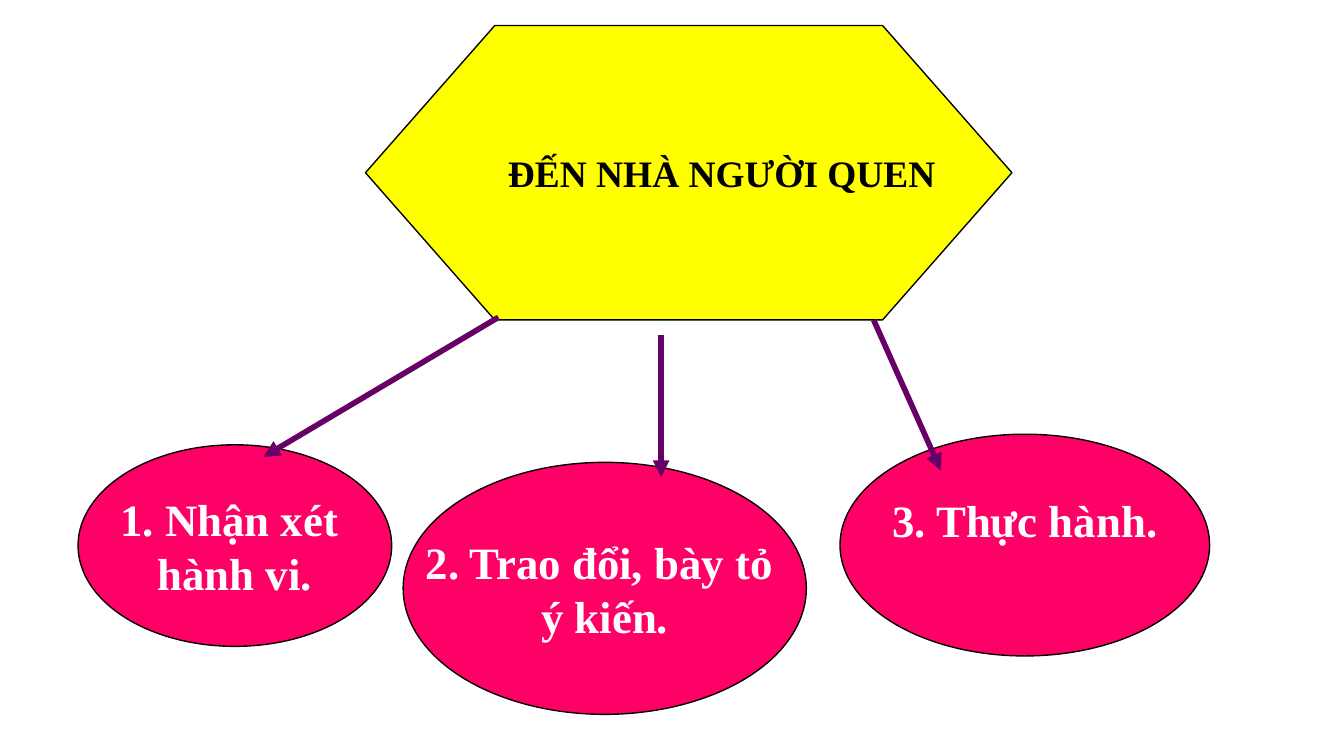
"""Build a slide with one topic hexagon pointing to three activity ellipses."""
from lxml import etree
from pptx import Presentation
from pptx.dml.color import RGBColor
from pptx.enum.shapes import MSO_CONNECTOR, MSO_SHAPE
from pptx.enum.text import MSO_ANCHOR, PP_ALIGN
from pptx.oxml.ns import qn
from pptx.util import Pt

HEXAGON = MSO_SHAPE.FLOWCHART_PREPARATION
ELLIPSE = MSO_SHAPE.OVAL
STRAIGHT = MSO_CONNECTOR.STRAIGHT
MIDDLE = MSO_ANCHOR.MIDDLE
LEFT, CENTER = PP_ALIGN.LEFT, PP_ALIGN.CENTER

FONT = "Times New Roman"
BLACK, WHITE, YELLOW, PINK, PURPLE = "000000", "FFFFFF", "FFFF00", "FF0066", "660066"

TOPIC = {"lines": ["ĐẾN NHÀ NGƯỜI QUEN"], "box": (195.8, 13.7, 346.3, 157.7)}
ACTIVITIES = [
    {"lines": ["1. Nhận xét ", "hành vi."], "box": (41.8, 238.3, 168, 108),
     "arrow": (267, 170, 141.1, 244.8)},
    {"lines": ["2. Trao đổi, bày tỏ ", "ý kiến."], "box": (216, 247.7, 216, 135),
     "arrow": (354.2, 179.3, 354.2, 255.6)},
    {"lines": ["3. Thực hành."], "box": (450, 232.6, 198, 118.8),
     "arrow": (468, 171.4, 504, 252), "bottom": 31.2},
]


def color(value):
    """Turn a hex string into a colour."""
    return RGBColor.from_string(value)


def write_text(frame, lines, size, ink, align, bottom=3.6):
    """Write one bold paragraph per line."""
    frame.word_wrap = False
    frame.vertical_anchor = MIDDLE
    frame.margin_bottom = Pt(bottom)
    for index, line in enumerate(lines):
        paragraph = frame.paragraphs[0] if index == 0 else frame.add_paragraph()
        paragraph.alignment = align
        run = paragraph.add_run()
        run.text = line
        run.font.name = FONT
        run.font.size = Pt(size)
        run.font.bold = True
        run.font.color.rgb = color(ink)


def add_node(slide, kind, box, fill):
    """Add a filled shape with a thin black outline."""
    shape = slide.shapes.add_shape(kind, *map(Pt, box))
    shape.shadow.inherit = False
    shape.fill.solid()
    shape.fill.fore_color.rgb = color(fill)
    shape.line.color.rgb = color(BLACK)
    shape.line.width = Pt(0.75)
    return shape


def add_arrow(slide, ends):
    """Add a purple arrow between two points."""
    arrow = slide.shapes.add_connector(STRAIGHT, *map(Pt, ends))
    arrow.line.color.rgb = color(PURPLE)
    arrow.line.width = Pt(3)
    properties = arrow.element.spPr
    etree.SubElement(properties.find(qn("a:ln")), qn("a:tailEnd"), type="triangle")
    etree.SubElement(properties, qn("a:effectLst"))


def main():
    """Build and save the slide."""
    presentation = Presentation()
    presentation.slide_width, presentation.slide_height = Pt(720), Pt(405)
    slide = presentation.slides.add_slide(presentation.slide_layouts[6])

    topic = add_node(slide, HEXAGON, TOPIC["box"], YELLOW)
    write_text(topic.text_frame, TOPIC["lines"], size=20, ink=BLACK, align=LEFT)

    for activity in ACTIVITIES:
        ellipse = add_node(slide, ELLIPSE, activity["box"], PINK)
        write_text(ellipse.text_frame, activity["lines"], size=24, ink=WHITE,
                   align=CENTER, bottom=activity.get("bottom", 3.6))
        add_arrow(slide, activity["arrow"])

    presentation.save("out.pptx")


if __name__ == "__main__":
    main()
